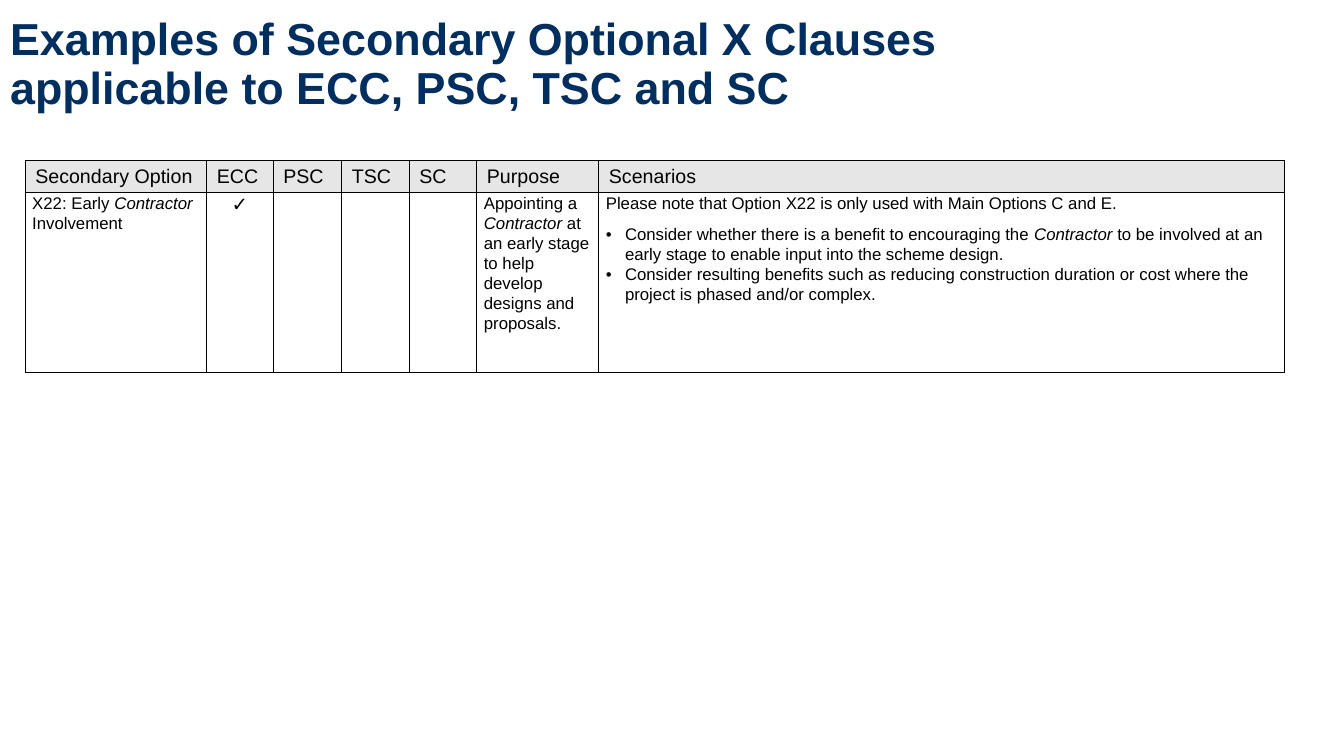
from dataclasses import dataclass

from lxml import etree
from pptx import Presentation
from pptx.dml.color import RGBColor
from pptx.enum import text
from pptx.oxml import ns
from pptx.util import Inches, Pt


@dataclass(frozen=True)
class Theme:
    font: str = "Arial"
    navy: str = "002E5F"
    black: str = "000000"
    header_fill: str = "E7E6E6"
    title_size: int = 32
    header_size: int = 14
    body_size: int = 12
    border_width: int = 1


THEME = Theme()
TITLE = "Examples of Secondary Optional X Clauses applicable to ECC, PSC, TSC and SC"
COLUMN_WIDTHS = [1.8, 0.66, 0.68, 0.67, 0.67, 1.21, 6.8]
ROW_HEIGHTS = [0.3, 1.79]
HEADERS = ["Secondary Option", "ECC", "PSC", "TSC", "SC", "Purpose", "Scenarios"]
# Asterisks enclose italic words.
OPTION = "X22: Early *Contractor* Involvement"
PURPOSE = "Appointing a *Contractor* at an early stage to help develop designs and proposals."
SCENARIO_NOTE = "Please note that Option X22 is only used with Main Options C and E."
SCENARIOS = [
    "Consider whether there is a benefit to encouraging the *Contractor *to be involved "
    "at an early stage to enable input into the scheme design.",
    "Consider resulting benefits such as reducing construction duration or cost where "
    "the project is phased and/or complex.",
]


def add_bullet(paragraph, indent=0.19):
    properties = paragraph._p.get_or_add_pPr()
    properties.set("marL", str(Inches(indent)))
    properties.set("indent", str(-Inches(indent)))
    etree.SubElement(properties, ns.qn("a:buFont"), typeface=THEME.font)
    etree.SubElement(properties, ns.qn("a:buChar"), char="•")


def write(paragraph, content, size=THEME.body_size, color=THEME.black, bold=False,
          align=text.PP_ALIGN.LEFT, line_spacing=1.07, space_after=0, bullet=False):
    """Fill a paragraph; words between asterisks become italic."""
    if bullet:
        add_bullet(paragraph)
    paragraph.alignment = align
    paragraph.line_spacing = line_spacing
    paragraph.space_after = Pt(space_after)
    for index, part in enumerate(content.split("*")):
        run = paragraph.add_run()
        run.text = part
        run.font.name = THEME.font
        run.font.size = Pt(size)
        run.font.bold = bold
        run.font.italic = index % 2 == 1
        run.font.color.rgb = RGBColor.from_string(color)


def set_borders(cell):
    properties = cell._tc.get_or_add_tcPr()
    for position, side in enumerate(("a:lnL", "a:lnR", "a:lnT", "a:lnB")):
        line = etree.Element(ns.qn(side), w=str(Pt(THEME.border_width)))
        fill = etree.SubElement(line, ns.qn("a:solidFill"))
        etree.SubElement(fill, ns.qn("a:srgbClr"), val=THEME.black)
        properties.insert(position, line)


def add_title(slide, left, top, width, height):
    title = slide.shapes.title
    title.left, title.top = Inches(left), Inches(top)
    title.width, title.height = Inches(width), Inches(height)
    frame = title.text_frame
    frame.word_wrap = True
    frame.auto_size = text.MSO_AUTO_SIZE.NONE
    frame.vertical_anchor = text.MSO_ANCHOR.MIDDLE
    write(frame.paragraphs[0], TITLE, size=THEME.title_size, color=THEME.navy,
          bold=True, line_spacing=0.9)


def fill_header(table):
    for cell, heading in zip(table.rows[0].cells, HEADERS):
        cell.fill.solid()
        cell.fill.fore_color.rgb = RGBColor.from_string(THEME.header_fill)
        write(cell.text_frame.paragraphs[0], heading, size=THEME.header_size,
              line_spacing=1.0)


def fill_body(table):
    for cell in table.rows[1].cells:
        cell.fill.background()
        cell.margin_left = cell.margin_right = Inches(0.07)
        cell.margin_top = cell.margin_bottom = 0
    option, ecc, *_, purpose, scenarios = [cell.text_frame for cell in table.rows[1].cells]
    write(option.paragraphs[0], OPTION, space_after=8)
    write(ecc.paragraphs[0], "✓", size=THEME.header_size, bold=True,
          align=text.PP_ALIGN.CENTER, space_after=8)
    write(purpose.paragraphs[0], PURPOSE, space_after=8)
    write(scenarios.paragraphs[0], SCENARIO_NOTE, space_after=8)
    for scenario in SCENARIOS:
        write(scenarios.add_paragraph(), scenario, bullet=True)


def add_clause_table(slide, left, top):
    table = slide.shapes.add_table(
        len(ROW_HEIGHTS), len(COLUMN_WIDTHS), Inches(left), Inches(top),
        Inches(sum(COLUMN_WIDTHS)), Inches(sum(ROW_HEIGHTS))).table
    table.horz_banding = False
    table.first_row = False
    for column, width in zip(table.columns, COLUMN_WIDTHS):
        column.width = Inches(width)
    for row, height in zip(table.rows, ROW_HEIGHTS):
        row.height = Inches(height)
    fill_header(table)
    fill_body(table)
    for cell in table.iter_cells():
        set_borders(cell)


def main():
    presentation = Presentation()
    presentation.slide_width, presentation.slide_height = Inches(13.33), Inches(7.5)
    slide = presentation.slides.add_slide(presentation.slide_layouts.get_by_name("Title Only"))
    add_clause_table(slide, 0.25, 1.59)
    add_title(slide, 0, 0, 11.47, 1.3)
    presentation.save("out.pptx")


if __name__ == "__main__":
    main()
